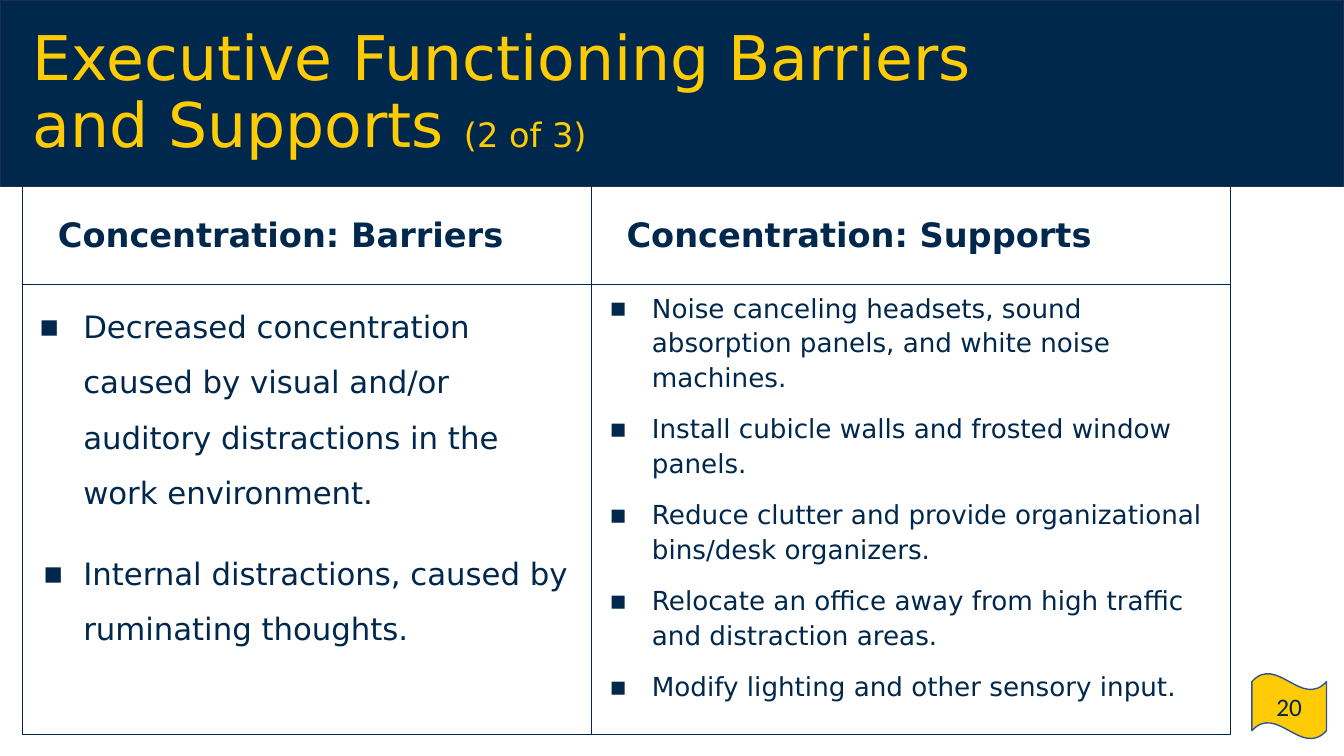
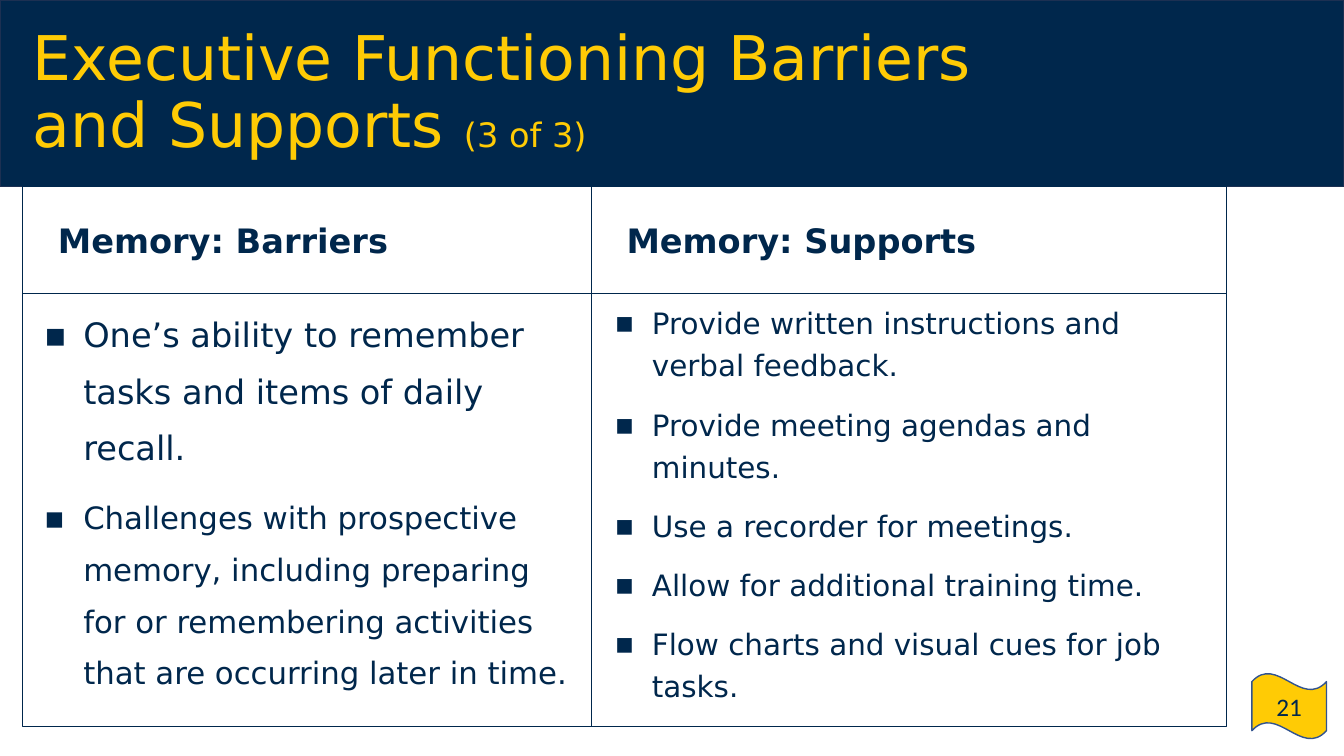
from dataclasses import dataclass

from lxml.etree import SubElement
from pptx import Presentation
from pptx.dml.color import RGBColor
from pptx.enum.shapes import MSO_SHAPE as SHAPE
from pptx.enum.text import MSO_ANCHOR as ANCHOR, PP_ALIGN as ALIGN
from pptx.oxml.ns import qn
from pptx.util import Cm, Pt


@dataclass(frozen=True)
class Theme:
    navy: RGBColor = RGBColor(0x00, 0x27, 0x4C)
    maize: RGBColor = RGBColor(0xFF, 0xCB, 0x05)
    band_edge: RGBColor = RGBColor(0x1C, 0x30, 0x52)
    flag_edge: RGBColor = RGBColor(0x31, 0x53, 0x8F)
    font: str = "DejaVu Sans"
    number_font: str = "Calibri"
    title_size: float = 44
    part_size: float = 24
    heading_size: float = 24
    number_size: float = 18


theme = Theme()
WIDTH, HEIGHT = 33.87, 19.05
LEFT, BARRIERS_WIDTH = 0.58, 14.33
TEXT_MARGIN = 1.27

# Per column: heading, line spacing, space before, bullets (text, size, hanging indent)
topics = [
    dict(
        part="(2 of 3)", top=4.62, heading_height=2.54, body_height=11.35, supports_width=16.1,
        columns=[
            ("Concentration: Barriers", 1.5, 18, [
                ("Decreased concentration caused by visual and/or auditory distractions "
                 "in the work environment.", 22, 1.12),
                ("Internal distractions, caused by ruminating thoughts.", 22, 1.02),
            ]),
            ("Concentration: Supports", 1.1, 12, [(text, 18.7, 1.07) for text in (
                "Noise canceling headsets, sound absorption panels, and white noise machines.",
                "Install cubicle walls and frosted window panels.",
                "Reduce clutter and provide organizational bins/desk organizers.",
                "Relocate an office away from high traffic and distraction areas.",
                "Modify lighting and other sensory input.",
            )]),
        ],
    ),
    dict(
        part="(3 of 3)", top=4.7, heading_height=2.69, body_height=10.92, supports_width=16,
        columns=[
            ("Memory: Barriers", 1.4, 12, [
                ("One’s ability to remember tasks and items of daily recall.", 24, 0.99),
                ("Challenges with prospective memory, including preparing for or remembering "
                 "activities that are occurring later in time.", 22, 0.99),
            ]),
            ("Memory: Supports", 1.2, 12, [(text, 21, 0.94) for text in (
                "Provide written instructions and verbal feedback.",
                "Provide meeting agendas and minutes.",
                "Use a recorder for meetings.",
                "Allow for additional training time.",
                "Flow charts and visual cues for job tasks.",
            )]),
        ],
    ),
]


def add_panel(slide, kind, box, fill, edge, edge_width, anchor):
    """Add an outlined shape and return its text frame; box is in centimetres."""
    panel = slide.shapes.add_shape(kind, *map(Cm, box))
    panel.shadow.inherit = False
    if fill is None:
        panel.fill.background()
    else:
        panel.fill.solid()
        panel.fill.fore_color.rgb = fill
    panel.line.color.rgb = edge
    panel.line.width = Pt(edge_width)
    frame = panel.text_frame
    frame.word_wrap = True
    frame.vertical_anchor = anchor
    return frame


def style(paragraph, size, color=theme.navy, font=theme.font, bold=False,
          align=ALIGN.LEFT, hanging=0, bullet=False):
    """Set alignment, indent, bullet and font of a paragraph."""
    paragraph.alignment = align
    if hanging:
        props = paragraph._p.get_or_add_pPr()
        props.set("marL", str(Cm(TEXT_MARGIN)))
        props.set("indent", str(-Cm(hanging)))
        if bullet:
            bullet_color = SubElement(props, qn("a:buClr"))
            SubElement(bullet_color, qn("a:srgbClr"), val=str(theme.navy))
            SubElement(props, qn("a:buFont"), typeface=theme.font)
            SubElement(props, qn("a:buChar"), char="▪")
    paragraph.font.size = Pt(size)
    paragraph.font.name = font
    paragraph.font.bold = bold
    paragraph.font.color.rgb = color


prs = Presentation()
prs.slide_width, prs.slide_height = Cm(WIDTH), Cm(HEIGHT)

for number, topic in enumerate(topics, start=20):
    slide = prs.slides.add_slide(prs.slide_layouts[6])

    # Title band and page flag
    add_panel(slide, SHAPE.RECTANGLE, (0, 0, WIDTH, 4.7),
              theme.navy, theme.band_edge, 1, ANCHOR.MIDDLE)
    flag = add_panel(slide, SHAPE.WAVE, (31.55, 16.97, 1.88, 1.65),
                     theme.maize, theme.flag_edge, 1, ANCHOR.MIDDLE)
    page = flag.paragraphs[0]
    page.add_run().text = str(number)
    style(page, theme.number_size, font=theme.number_font, align=ALIGN.CENTER)

    # Title
    title_frame = slide.shapes.add_textbox(Cm(LEFT), Cm(0.53), Cm(26.8), Cm(3.68)).text_frame
    title_frame.word_wrap = True
    title_frame.vertical_anchor = ANCHOR.MIDDLE
    title = title_frame.paragraphs[0]
    title.add_run().text = "Executive Functioning Barriers and Supports "
    part = title.add_run()
    part.text = topic["part"]
    part.font.size = Pt(theme.part_size)
    style(title, theme.title_size, theme.maize)
    title.line_spacing = 0.9

    # Barriers and supports columns
    left = LEFT
    body_top = topic["top"] + topic["heading_height"]
    widths = (BARRIERS_WIDTH, topic["supports_width"])
    for width, (heading_text, spacing, before, bullets) in zip(widths, topic["columns"]):
        heading_frame = add_panel(
            slide, SHAPE.RECTANGLE, (left, topic["top"], width, topic["heading_height"]),
            None, theme.navy, 0.75, ANCHOR.MIDDLE)
        heading = heading_frame.paragraphs[0]
        heading.add_run().text = heading_text
        style(heading, theme.heading_size, bold=True, hanging=0.64)
        heading.space_before = Pt(18)

        body = add_panel(slide, SHAPE.RECTANGLE, (left, body_top, width, topic["body_height"]),
                         None, theme.navy, 0.75, ANCHOR.TOP)
        for index, (text, size, hanging) in enumerate(bullets):
            item = body.add_paragraph() if index else body.paragraphs[0]
            item.add_run().text = text
            style(item, size, hanging=hanging, bullet=True)
            item.line_spacing = spacing
            item.space_before = Pt(before)
        left += width

prs.save("out.pptx")
